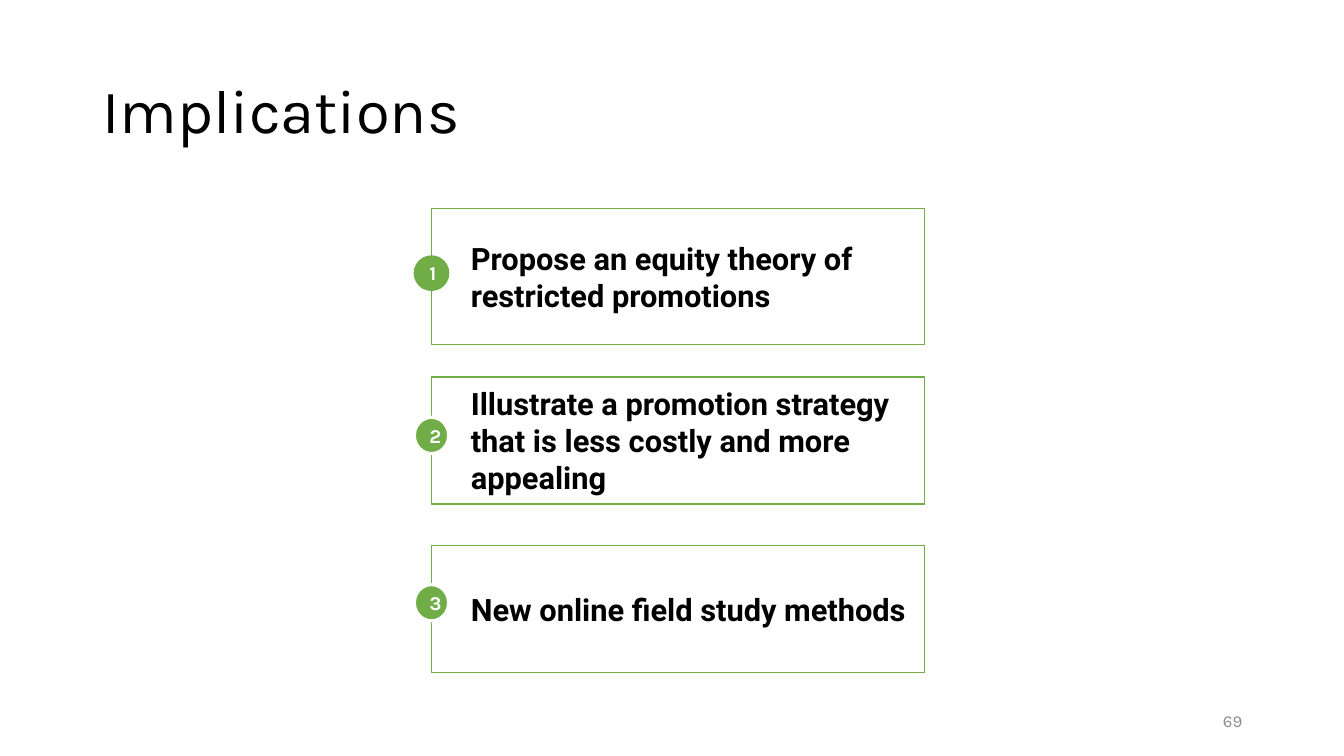
from pptx import Presentation
from pptx.dml.color import RGBColor
from pptx.enum.shapes import MSO_SHAPE as Shape
from pptx.enum.text import MSO_ANCHOR as Anchor, PP_ALIGN as Align
from pptx.util import Inches, Pt

TITLE = "Implications"
PAGE_NUMBER = "69"
GREEN, WHITE, BLACK, GRAY = "70AD47", "FFFFFF", "000000", "8C8C8C"

# text, card height, badge top, badge height, badge outline, outline width
IMPLICATIONS = [
    ("Propose an equity theory of restricted promotions", 1.35, 2.54, 0.34, GREEN, 1),
    ("Illustrate a promotion strategy that is less costly and more appealing",
     1.26, 4.14, 0.36, WHITE, 2.25),
    ("New online field study methods", 1.26, 5.8, 0.36, WHITE, 2.25),
]
CARD_LEFT, CARD_TOP, CARD_WIDTH, CARD_PITCH = 4.28, 2.07, 4.89, 1.67
CARD_INDENT = 0.39
BADGE_WIDTH = 0.34


def color(hex_text):
    return RGBColor.from_string(hex_text)


def write(box, text, size, font, hex_text, bold=False, align=Align.LEFT, indent=0.1):
    frame = box.text_frame
    frame.text = text
    frame.word_wrap = True
    frame.vertical_anchor = Anchor.MIDDLE
    frame.margin_left = Inches(indent)
    para = frame.paragraphs[0]
    para.alignment = align
    span = para.runs[0].font
    span.size, span.name, span.bold = Pt(size), font, bold
    span.color.rgb = color(hex_text)
    return para


def add_text(page, place, *style, **options):
    box = page.shapes.add_textbox(*map(Inches, place))
    return write(box, *style, **options)


def add_filled(page, kind, place, fill, line, line_width):
    shape = page.shapes.add_shape(kind, *map(Inches, place))
    shape.shadow.inherit = False
    shape.fill.solid()
    shape.fill.fore_color.rgb = color(fill)
    shape.line.color.rgb = color(line)
    shape.line.width = Pt(line_width)
    return shape


def main():
    deck = Presentation()
    deck.slide_width, deck.slide_height = Inches(13.33), Inches(7.5)
    page = deck.slides.add_slide(deck.slide_layouts[6])

    title = add_text(page, (0.92, 0.4, 11.5, 1.45), TITLE, 44, "Karla", BLACK)
    title.line_spacing = 0.9
    add_text(page, (9.42, 6.95, 3, 0.4), PAGE_NUMBER, 12, "Karla", GRAY, align=Align.RIGHT)

    for row, (text, height, badge_top, badge_height, outline, width) in enumerate(IMPLICATIONS):
        card_place = (CARD_LEFT, CARD_TOP + row * CARD_PITCH, CARD_WIDTH, height)
        card = add_filled(page, Shape.RECTANGLE, card_place, WHITE, GREEN, 1)
        write(card, text, 22, "Roboto", BLACK, bold=True, indent=CARD_INDENT)

        badge_place = (CARD_LEFT - BADGE_WIDTH / 2, badge_top, BADGE_WIDTH, badge_height)
        badge = add_filled(page, Shape.OVAL, badge_place, GREEN, outline, width)
        write(badge, str(row + 1), 14, "Karla", WHITE, bold=True, align=Align.CENTER)

    deck.save("out.pptx")


if __name__ == "__main__":
    main()
